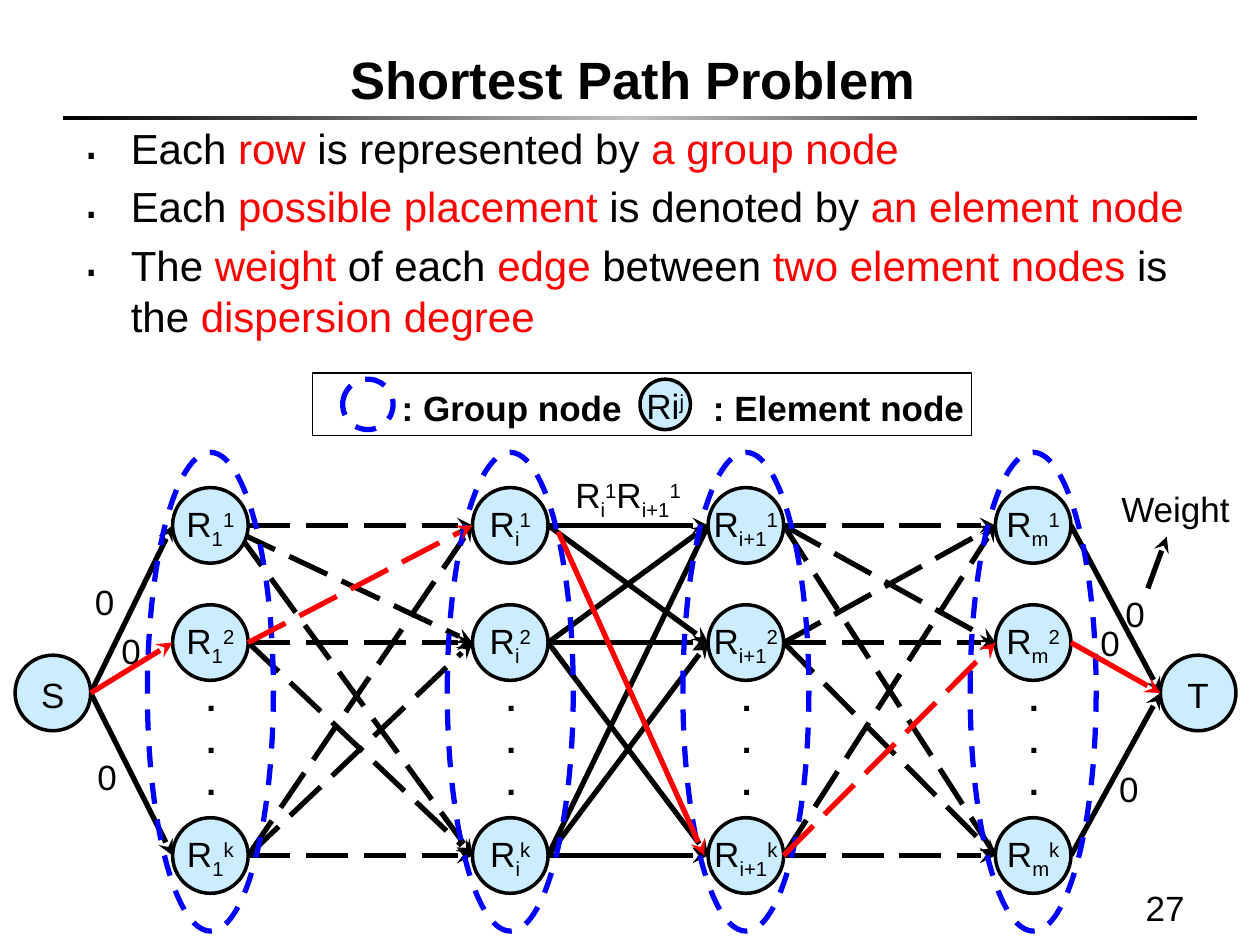
"""Build the shortest path problem slide with its layered node graph."""
from copy import deepcopy
from itertools import product
from lxml import etree
from pptx import Presentation
from pptx.dml.color import RGBColor
from pptx.enum.dml import MSO_LINE
from pptx.enum.shapes import MSO_CONNECTOR, MSO_SHAPE
from pptx.enum.text import MSO_ANCHOR, PP_ALIGN
from pptx.oxml.ns import qn
from pptx.util import Inches, Pt

DASH, LONG_DASH = MSO_LINE.DASH, MSO_LINE.LONG_DASH
OVAL, RECT, STRAIGHT = MSO_SHAPE.OVAL, MSO_SHAPE.RECTANGLE, MSO_CONNECTOR.STRAIGHT
LEFT, CENTER, RIGHT = PP_ALIGN.LEFT, PP_ALIGN.CENTER, PP_ALIGN.RIGHT
TOP, MIDDLE, BOTTOM = MSO_ANCHOR.TOP, MSO_ANCHOR.MIDDLE, MSO_ANCHOR.BOTTOM

THEME = {"font": "Arial", "ink": "000000", "red": "FF0000", "blue": "0000FF",
         "node": "CCECFF", "silver": "C0C0C0", "title": 30, "body": 24, "label": 20}
BASELINE = {"sub": "-25000", "sup": "30000"}

TITLE = "Shortest Path Problem"
BULLETS = [
    [("Each ", "ink"), ("row ", "red"), ("is represented by ", "ink"), ("a group node", "red")],
    [("Each ", "ink"), ("possible placement ", "red"), ("is denoted by ", "ink"),
     ("an element node", "red")],
    [("The ", "ink"), ("weight", "red"), (" of each ", "ink"), ("edge ", "red"),
     ("between", "ink"), (" two element nodes ", "red"), ("is the ", "ink"),
     ("dispersion degree", "red")],
]
COLUMNS = [("1", 1.37), ("i", 3.75), ("i+1", 5.62), ("m", 7.9)]
ROWS = [("1", 4.17), ("2", 5.1), ("k", 6.79)]
LAYER_DASHES = [LONG_DASH, None, LONG_DASH]
SIZE, RADIUS = 0.6, 0.3
SOURCE, TARGET = (0.72, 5.5), (9.21, 5.5)
RED_EDGES = {(0, 1, 0), (1, 0, 2), (2, 2, 1)}
RED_ROW = 1
HEADLESS = {(1, 2, 0), (2, 0, 2)}
SHIFTED = {(0, 0, 1): ((1.88, 4.22), (3.75, 5.1)),
           (0, 0, 2): ((1.88, 4.22), (3.75, 6.79)),
           (1, 0, 2): ((4.43, 4.22), (5.59, 6.79))}
ZEROS = [(0.58, 4.51), (0.79, 4.9), (0.6, 5.9), (8.76, 4.6), (8.56, 4.83), (8.71, 5.99)]


def rgb(name):
    return RGBColor.from_string(THEME[name])


def write(tf, paragraphs, size="label", bold=False, align=CENTER, anchor=TOP,
          wrap=True, insets=(0.1, 0.05, 0.1, 0.05)):
    tf.word_wrap, tf.vertical_anchor = wrap, anchor
    tf.margin_left, tf.margin_top, tf.margin_right, tf.margin_bottom = map(Inches, insets)
    for i, runs in enumerate(paragraphs):
        p = tf.add_paragraph() if i else tf.paragraphs[0]
        p.alignment = align
        for text, style in [(runs, "ink")] if isinstance(runs, str) else runs:
            r = p.add_run()
            r.text = text
            r.font.name, r.font.size, r.font.bold = THEME["font"], Pt(THEME[size]), bold
            r.font.color.rgb = rgb("ink" if style in BASELINE else style)
            if style in BASELINE:
                r.font._element.set("baseline", BASELINE[style])


def label(s, box, paragraphs, **fmt):
    tf = s.shapes.add_textbox(*map(Inches, box)).text_frame
    write(tf, paragraphs, **fmt)
    return tf


def shape(s, kind, box, fill=None, line="ink", width=2, dash=None):
    sp = s.shapes.add_shape(kind, *map(Inches, box))
    sp.shadow.inherit = False
    if fill:
        sp.fill.solid()
        sp.fill.fore_color.rgb = rgb(fill)
    else:
        sp.fill.background()
    sp.line.color.rgb, sp.line.width = rgb(line), Pt(width)
    if dash:
        sp.line.dash_style = dash
    return sp


def node(s, x, y, runs, size=SIZE):
    sp = shape(s, OVAL, (x, y - size / 2, size, size), fill="node")
    write(sp.text_frame, [runs], anchor=MIDDLE, wrap=False, insets=(0, 0.02, 0, 0))


def edge(s, start, end, color="ink", dash=None, head=True):
    c = s.shapes.add_connector(STRAIGHT, *map(Inches, start + end))
    c.line.color.rgb, c.line.width = rgb(color), Pt(3)
    if dash:
        c.line.dash_style = dash
    if head:
        etree.SubElement(c.line._get_or_add_ln(), qn("a:tailEnd"), type="stealth")
    etree.SubElement(c._element.spPr, qn("a:effectLst"))


def add_header(s):
    rule = shape(s, RECT, (0.5, 0.92, 9, 0.03))
    rule.line.fill.background()
    rule.fill.gradient()
    rule.fill.gradient_angle = 0
    stops = rule._element.spPr.find(".//" + qn("a:gsLst"))
    stops.append(deepcopy(stops[-1]))
    for stop, (pos, name) in zip(rule.fill.gradient_stops,
                                 [(0, "ink"), (0.5, "silver"), (1, "ink")]):
        stop.position, stop.color.rgb = pos, rgb(name)

    title = s.shapes.title
    title.left, title.top, title.width, title.height = map(Inches, (0.28, 0, 9.37, 0.92))
    write(title.text_frame, [TITLE], size="title", bold=True, anchor=BOTTOM)
    title.text_frame.paragraphs[0]._p.get_or_add_pPr().set("marL", str(Inches(0.12)))
    label(s, (7.42, 6.92, 2.08, 0.5), ["27"], align=RIGHT, anchor=BOTTOM)

    tf = label(s, (0.56, 0.92, 9.06, 1.93), BULLETS, size="body", align=LEFT)
    for p in tf.paragraphs:
        p.space_before = Pt(0.2 * THEME["body"])
        pPr = p._p.get_or_add_pPr()
        pPr.set("marL", str(Inches(0.38)))
        pPr.set("indent", str(-Inches(0.38)))
        color = etree.SubElement(pPr, qn("a:buClr"))
        etree.SubElement(color, qn("a:srgbClr"), val=THEME["ink"])
        etree.SubElement(pPr, qn("a:buSzPct"), val="120000")
        etree.SubElement(pPr, qn("a:buChar"), char="․")


def add_legend(s):
    shape(s, RECT, (2.48, 2.96, 5.23, 0.5), width=0.75)
    shape(s, OVAL, (2.72, 3.01, 0.4, 0.4), line="blue", width=3, dash=DASH)
    node(s, 5.08, 3.21, [("Ri", "ink"), ("j", "sup")], size=0.4)
    for x, width, text in [(3.09, 1.96, ": Group node"), (5.56, 2.21, ": Element node")]:
        label(s, (x, 3.02, width, 0.44), [text], bold=True, align=LEFT, wrap=False)


def layer_edges():
    for layer, dash in enumerate(LAYER_DASHES):
        x1, x2 = COLUMNS[layer][1] + SIZE, COLUMNS[layer + 1][1]
        for a, b in product(range(len(ROWS)), repeat=2):
            key = (layer, a, b)
            start, end = SHIFTED.get(key, ((x1, ROWS[a][1]), (x2, ROWS[b][1])))
            color = "red" if key in RED_EDGES else "ink"
            yield start, end, color, None if layer == 1 else dash, key not in HEADLESS


def end_edges():
    for i, (_, y) in enumerate(ROWS):
        color = "red" if i == RED_ROW else "ink"
        yield SOURCE, (COLUMNS[0][1], y), color
        yield (COLUMNS[-1][1] + SIZE, y), TARGET, color


def add_graph(s):
    edges = [*layer_edges(), *end_edges()]
    for e in edges:
        if e[2] == "ink":
            edge(s, *e)
    edge(s, (9.11, 4.67), (9.26, 4.26))

    for sub, x in COLUMNS:
        shape(s, OVAL, (x + RADIUS - 0.5, 3.59, 1, 3.8), line="blue", width=3, dash=DASH)
        for sup, y in ROWS:
            node(s, x, y, [("R", "ink"), (sub, "sub"), (sup, "sup")])
        label(s, (x + 0.17, 5.32, 0.28, 1.11), ["."] * 3, bold=True, align=LEFT, wrap=False)
    node(s, SOURCE[0] - SIZE, SOURCE[1], "S")
    node(s, *TARGET, "T")

    insets = (0, 0.1, 0, 0.05)
    for x, y in ZEROS:
        label(s, (x, y, 0.5, 0.5), ["0"], insets=insets)
    label(s, (8.78, 3.77, 1.1, 0.49), ["Weight"], insets=insets)
    pair = [("R", "ink"), ("i", "sub"), ("1", "sup"), ("R", "ink"), ("i+1", "sub"), ("1", "sup")]
    label(s, (4.42, 3.66, 1.13, 0.49), [pair], insets=insets)
    for e in edges:
        if e[2] == "red":
            edge(s, *e)


def main():
    prs = Presentation()
    prs.slide_width, prs.slide_height = Inches(10), Inches(7.5)
    s = prs.slides.add_slide(prs.slide_layouts[5])
    add_header(s)
    add_legend(s)
    add_graph(s)
    prs.save("out.pptx")


if __name__ == "__main__":
    main()
